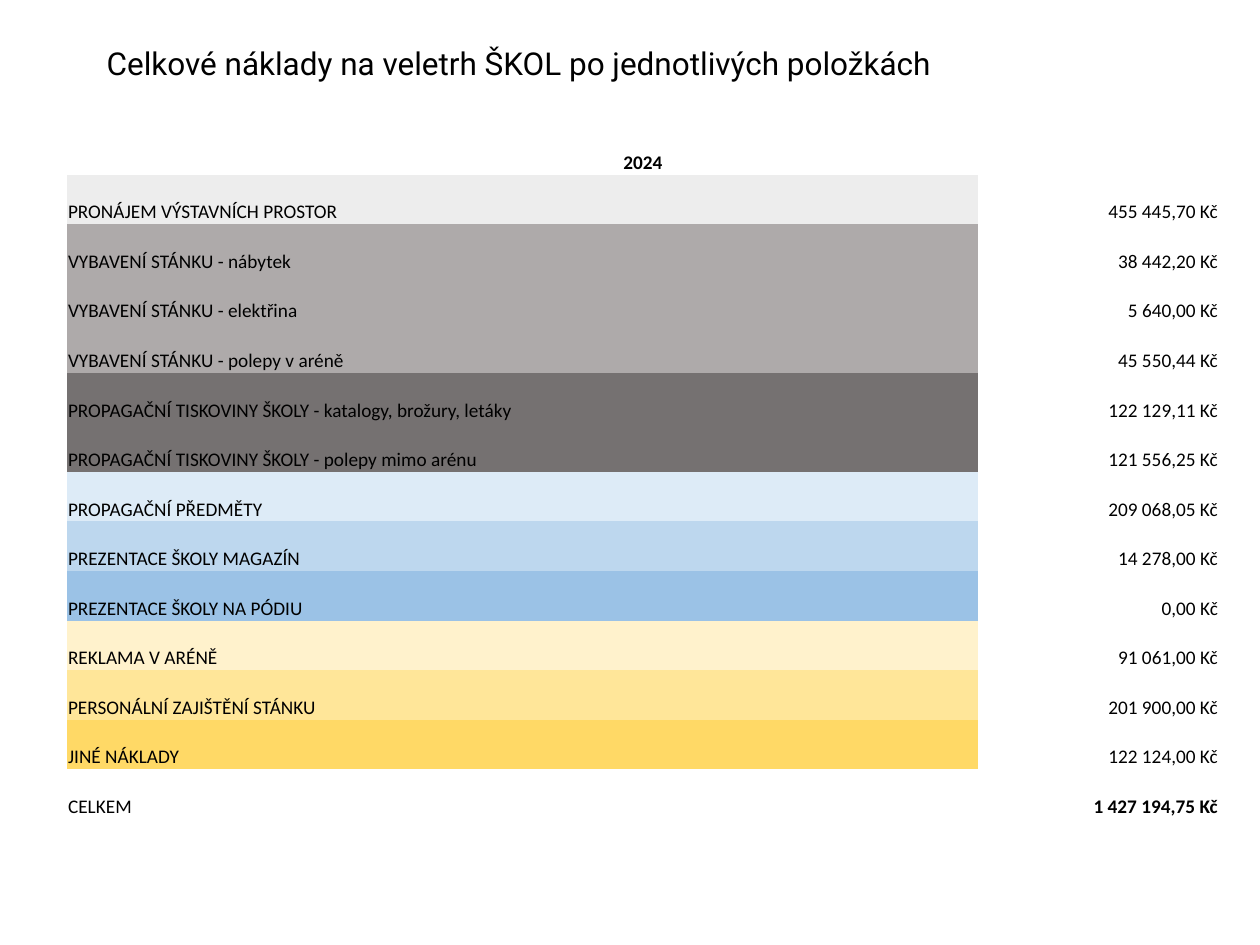
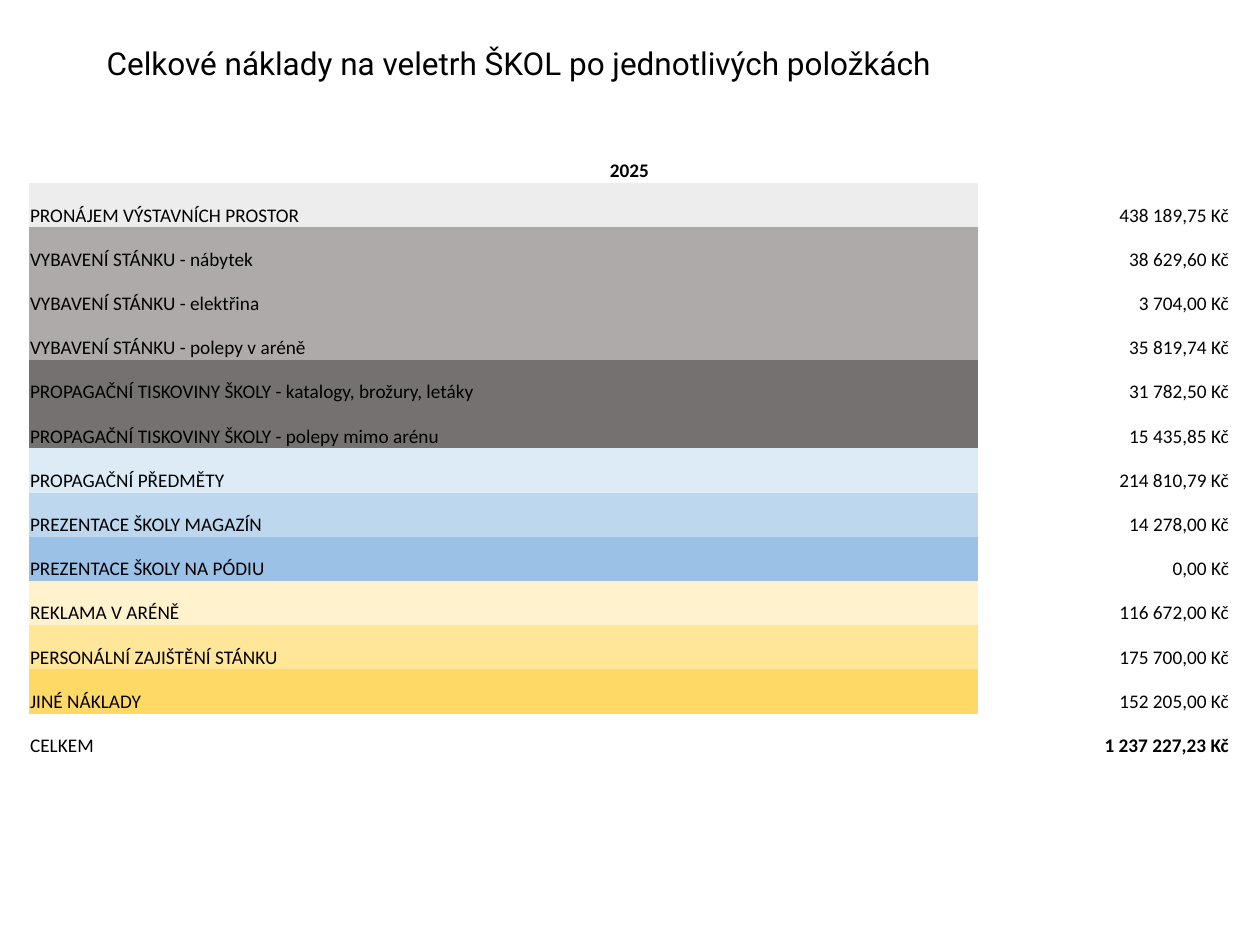
from pptx import Presentation
from pptx.dml.color import RGBColor
from pptx.enum.text import MSO_ANCHOR as Anchor, MSO_AUTO_SIZE as AutoSize, PP_ALIGN as Align
from pptx.oxml.ns import qn
from pptx.util import Emu, Pt

BLACK = RGBColor(0x00, 0x00, 0x00)
PALE_GREY = RGBColor(0xED, 0xED, 0xED)
MID_GREY = RGBColor(0xAE, 0xAA, 0xAA)
DARK_GREY = RGBColor(0x75, 0x71, 0x71)
PALE_BLUE = RGBColor(0xDD, 0xEB, 0xF7)
LIGHT_BLUE = RGBColor(0xBD, 0xD7, 0xEE)
BLUE = RGBColor(0x9B, 0xC2, 0xE6)
PALE_GOLD = RGBColor(0xFF, 0xF2, 0xCC)
LIGHT_GOLD = RGBColor(0xFF, 0xE6, 0x99)
GOLD = RGBColor(0xFF, 0xD9, 0x66)

PLAIN_TABLE_STYLE = "{2D5ABB26-0587-4C30-8999-92F81FD0307C}"
TITLE = "Celkové náklady na veletrh ŠKOL po jednotlivých položkách"

COST_ITEMS = [
    ("PRONÁJEM VÝSTAVNÍCH PROSTOR", PALE_GREY),
    ("VYBAVENÍ STÁNKU - nábytek", MID_GREY),
    ("VYBAVENÍ STÁNKU - elektřina", MID_GREY),
    ("VYBAVENÍ STÁNKU - polepy v aréně", MID_GREY),
    ("PROPAGAČNÍ TISKOVINY ŠKOLY - katalogy, brožury, letáky", DARK_GREY),
    ("PROPAGAČNÍ TISKOVINY ŠKOLY - polepy mimo arénu", DARK_GREY),
    ("PROPAGAČNÍ PŘEDMĚTY", PALE_BLUE),
    ("PREZENTACE ŠKOLY MAGAZÍN", LIGHT_BLUE),
    ("PREZENTACE ŠKOLY NA PÓDIU", BLUE),
    ("REKLAMA V ARÉNĚ", PALE_GOLD),
    ("PERSONÁLNÍ ZAJIŠTĚNÍ STÁNKU", LIGHT_GOLD),
    ("JINÉ NÁKLADY", GOLD),
    ("CELKEM", None),
]

YEARS = [
    ("2024", (67, 125, 694), (911, 241), [
        "455 445,70", "38 442,20", "5 640,00", "45 550,44", "122 129,11",
        "121 556,25", "209 068,05", "14 278,00", "0,00", "91 061,00",
        "201 900,00", "122 124,00", "1 427 194,75"]),
    ("2025", (29, 139, 619), (949, 252), [
        "438 189,75", "38 629,60", "3 704,00", "35 819,74", "31 782,50",
        "15 435,85", "214 810,79", "14 278,00", "0,00", "116 672,00",
        "175 700,00", "152 205,00", "1 237 227,23"]),
]


def px(length):
    return Emu(round(length * 914400 / 126))


def write_cell(cell, text, align, bold=False, fill=None):
    cell.margin_left = cell.margin_right = cell.margin_top = px(1)
    cell.margin_bottom = 0
    cell.vertical_anchor = Anchor.BOTTOM
    if fill is None:
        cell.fill.background()
    else:
        cell.fill.solid()
        cell.fill.fore_color.rgb = fill
    para = cell.text_frame.paragraphs[0]
    para.alignment = align
    span = para.add_run()
    span.text = text
    span.font.name = "Calibri"
    span.font.size = Pt(11)
    span.font.bold = bold
    span.font.color.rgb = BLACK


deck = Presentation()
deck.slide_width, deck.slide_height = px(1260), px(945)
title_only = deck.slide_layouts[5]

for year, (left, top, height), widths, amounts in YEARS:
    page = deck.slides.add_slide(title_only)

    title = page.shapes.title
    title.left, title.top, title.width, title.height = px(94), px(38), px(1099), px(50)
    frame = title.text_frame
    frame.auto_size = AutoSize.NONE
    frame.word_wrap = True
    frame.vertical_anchor = Anchor.TOP
    para = frame.paragraphs[0]
    para.alignment = Align.LEFT
    span = para.add_run()
    span.text = TITLE
    span.font.name = "Roboto"
    span.font.size = Pt(18)
    span.font.color.rgb = BLACK

    row_count = len(COST_ITEMS) + 1
    holder = page.shapes.add_table(row_count, 2, px(left), px(top), px(sum(widths)), px(height))
    holder.element.find(".//" + qn("a:tableStyleId")).text = PLAIN_TABLE_STYLE
    table = holder.table
    table.first_row = table.horz_banding = False
    for column, width in zip(table.columns, widths):
        column.width = px(width)
    for row in table.rows:
        row.height = px(height / row_count)

    table.cell(0, 0).merge(table.cell(0, 1))
    write_cell(table.cell(0, 0), year, Align.CENTER, bold=True)
    for index, ((label, fill), amount) in enumerate(zip(COST_ITEMS, amounts), start=1):
        write_cell(table.cell(index, 0), label, Align.LEFT, fill=fill)
        write_cell(table.cell(index, 1), f"{amount} Kč", Align.RIGHT, bold=label == "CELKEM")

deck.save("out.pptx")
